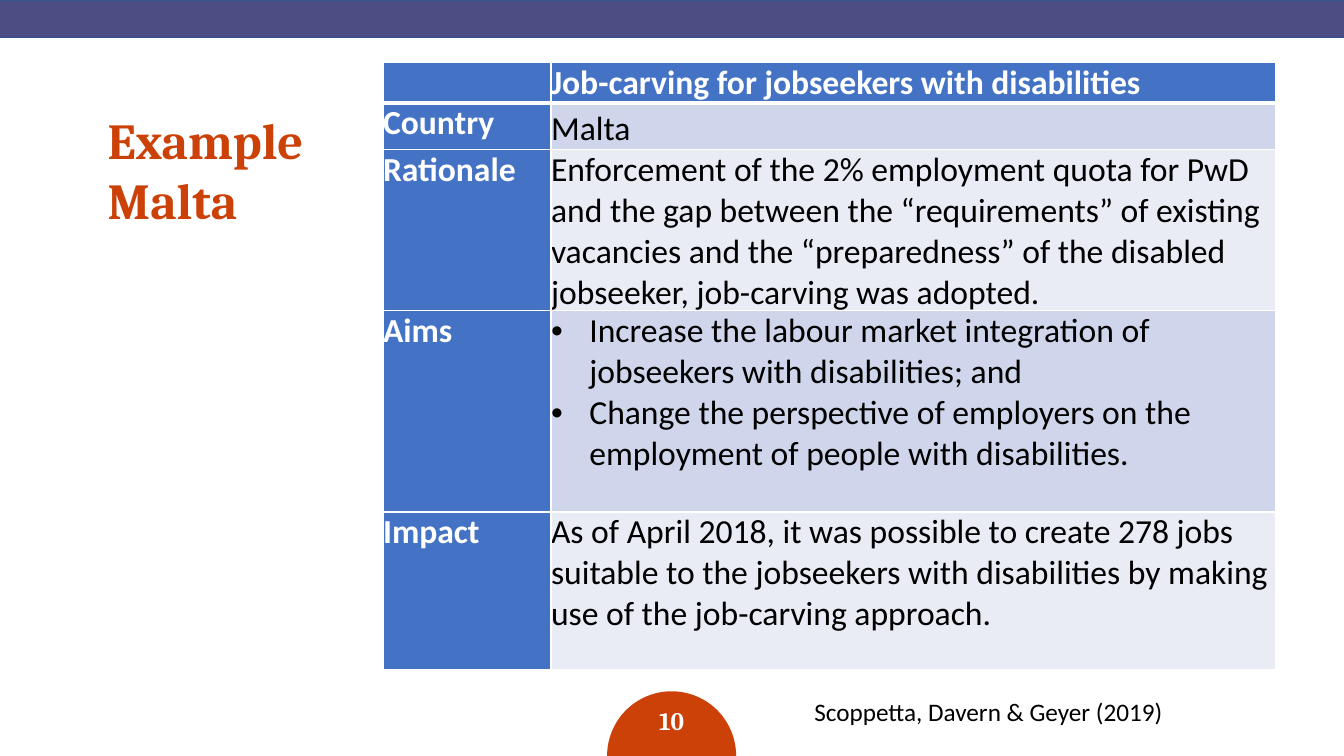
from lxml import etree
from pptx import Presentation
from pptx import util as u
from pptx.dml.color import RGBColor
from pptx.enum import shapes, text
from pptx.oxml.ns import qn

WHITE = RGBColor(0xFF, 0xFF, 0xFF)
BLACK = RGBColor(0, 0, 0)
RUST = RGBColor(0xCC, 0x41, 0x08)
PLUM = RGBColor(0x4D, 0x4C, 0x83)
NAVY = RGBColor(0x32, 0x54, 0x91)
BLUE = RGBColor(0x44, 0x72, 0xC4)
BANDS = [RGBColor(0xE9, 0xEB, 0xF5), RGBColor(0xCF, 0xD5, 0xEA)]

deck = Presentation()
deck.slide_width = u.Inches(13.33)
deck.slide_height = u.Inches(7.5)
slide = deck.slides.add_slide(deck.slide_layouts[6])
UNIT = deck.slide_width / 80


def grid(*spans):
    return [round(span * UNIT) for span in spans]


def write(frame, words, size=24, face="Calibri", color=BLACK, bold=False,
          align=text.PP_ALIGN.LEFT, lead=None, bullet=False):
    frame.word_wrap = True
    for i, line in enumerate(words.split("\n")):
        para = frame.paragraphs[0] if i == 0 else frame.add_paragraph()
        para.text = line
        para.alignment = align
        para.line_spacing = lead
        if bullet:
            props = para._p.get_or_add_pPr()
            props.set("marL", str(u.Inches(0.38)))
            props.set("indent", str(-u.Inches(0.38)))
            etree.SubElement(props, qn("a:buFont"), typeface="Arial")
            etree.SubElement(props, qn("a:buChar"), char="•")
        font = para.font
        font.size, font.name, font.bold = u.Pt(size), face, bold
        font.color.rgb = color


bar = slide.shapes.add_shape(shapes.MSO_SHAPE.RECTANGLE, *grid(-5.82, 0, 95.22, 2.22))
bar.shadow.inherit = False
bar.fill.solid()
bar.fill.fore_color.rgb = PLUM
bar.line.color.rgb = NAVY
bar.line.width = u.Pt(1)

title = slide.shapes.add_textbox(*grid(5.82, 5.94, 64.62, 8.28)).text_frame
title.vertical_anchor = text.MSO_ANCHOR.MIDDLE
write(title, "Example \vMalta", size=36, face="Cambria", color=RUST, bold=True,
      lead=u.Pt(43.2))

badge = slide.shapes.add_shape(shapes.MSO_SHAPE.OVAL, *grid(36.14, 41.16, 7.68, 7.68))
badge.shadow.inherit = False
badge.fill.solid()
badge.fill.fore_color.rgb = RUST
badge.line.fill.background()
badge.text_frame.margin_top = 0
badge.text_frame.vertical_anchor = text.MSO_ANCHOR.TOP
write(badge.text_frame, "10", size=18, face="Cambria", color=WHITE, bold=True,
      align=text.PP_ALIGN.CENTER, lead=u.Pt(18))

credit = slide.shapes.add_textbox(*grid(47.88, 41.16, 24.66, 2.4)).text_frame
write(credit, "Scoppetta, Davern & Geyer (2019)", size=18)

ROWS = [
    (2.34, "", "Job-carving for jobseekers with disabilities"),
    (2.76, "Country", "Malta"),
    (9.6, "Rationale", "Enforcement of the 2% employment quota for PwD and the gap between "
     "the “requirements” of existing vacancies and the “preparedness” of the disabled "
     "jobseeker, job-carving was adopted."),
    (12, "Aims", "Increase the labour market integration of jobseekers with disabilities; and\n"
     "Change the perspective of employers on the employment of people with disabilities."),
    (9.4, "Impact", "As of April 2018, it was possible to create 278 jobs suitable to the "
     "jobseekers with disabilities by making use of the job-carving approach."),
]
COLS = [10, 43.1]
high = sum(row[0] for row in ROWS)
table = slide.shapes.add_table(len(ROWS), len(COLS),
                               *grid(22.8, 3.72, sum(COLS), high)).table
for col, width in zip(table.columns, grid(*COLS)):
    col.width = width

for r, (tall, *words) in enumerate(ROWS):
    table.rows[r].height = grid(tall)[0]
    for c, word in enumerate(words):
        cell = table.cell(r, c)
        head = r == 0 or c == 0
        cell.margin_left = cell.margin_top = cell.margin_bottom = 0
        cell.margin_right = u.Inches(0.02)
        props = cell._tc.get_or_add_tcPr()
        for side in "LRTB":
            thick = 3 if (r, side) in [(0, "B"), (1, "T")] else 1
            edge = etree.SubElement(props, qn("a:ln" + side), w=str(u.Pt(thick)))
            paint = etree.SubElement(edge, qn("a:solidFill"))
            etree.SubElement(paint, qn("a:srgbClr"), val=str(WHITE))
        cell.fill.solid()
        cell.fill.fore_color.rgb = BLUE if head else BANDS[r % 2]
        write(cell.text_frame, word, color=WHITE if head else BLACK, bold=head,
              size=24 if word else 18, lead=1.15 if word == "Malta" else None,
              bullet="\n" in word)

deck.save("out.pptx")
